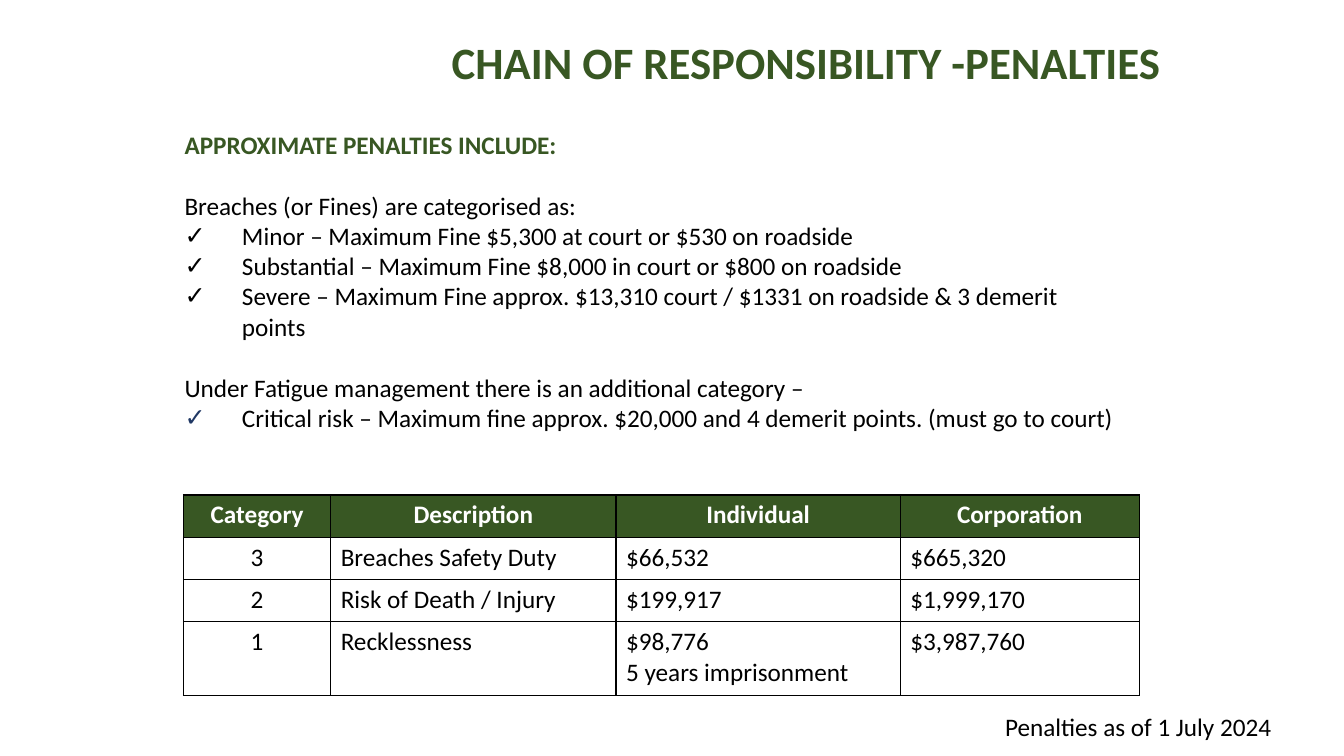
from lxml import etree
from pptx import Presentation
from pptx.dml.color import RGBColor
from pptx.enum.text import MSO_ANCHOR, MSO_AUTO_SIZE, PP_ALIGN
from pptx.oxml.ns import qn
from pptx.util import Inches, Pt

LEFT, CENTER = PP_ALIGN.LEFT, PP_ALIGN.CENTER
TOP, NO_FIT = MSO_ANCHOR.TOP, MSO_AUTO_SIZE.NONE

# Content
COLORS = {"green": "385723", "black": "000000", "white": "FFFFFF", "navy": "203864"}
FONT = "Calibri"
TITLE = "CHAIN OF RESPONSIBILITY -PENALTIES"
HEAD = "APPROXIMATE PENALTIES INCLUDE:"
GROUPS = [
    ("Breaches (or Fines) are categorised as:", "black", [
        "Minor – Maximum Fine $5,300 at court or $530 on roadside",
        "Substantial – Maximum Fine $8,000 in court or $800 on roadside",
        "Severe – Maximum Fine approx. $13,310 court / $1331 on roadside & 3 demerit points",
    ]),
    ("Under Fatigue management there is an additional category –", "navy", [
        "Critical risk – Maximum fine approx. $20,000 and 4 demerit points. (must go to court)",
    ]),
]
ROWS = [
    ["Category", "Description", "Individual", "Corporation"],
    ["3", "Breaches Safety Duty", "$66,532", "$665,320"],
    ["2", "Risk of Death / Injury", "$199,917", "$1,999,170"],
    ["1", "Recklessness", "$98,776\n5 years imprisonment", "$3,987,760"],
]
WIDTHS = [1.46, 2.83, 2.82, 2.37]
HEIGHTS = [0.42, 0.42, 0.42, 0.73]
NOTE = "Penalties as of 1 July 2024"


def color(name):
    return RGBColor.from_string(COLORS[name])


def write(frame, text, size=18, tint="black", bold=False, align=LEFT,
          before=0, mark=None):
    """Add the lines of text to a frame; mark is the colour of a tick bullet."""
    for line in text.split("\n"):
        para = frame.paragraphs[-1]
        if para.runs:
            para = frame.add_paragraph()
        para.alignment = align
        para.space_before = Pt(before)
        run = para.add_run()
        run.text = line
        run.font.name, run.font.size, run.font.bold = FONT, Pt(size), bold
        run.font.color.rgb = color(tint)
        props = para._p.get_or_add_pPr()
        inset = Inches(0.57) if mark else 0
        props.set("marL", str(inset))
        props.set("indent", str(-inset))
        if mark:
            shade = etree.SubElement(props, qn("a:buClr"))
            etree.SubElement(shade, qn("a:srgbClr"), val=COLORS[mark])
            etree.SubElement(props, qn("a:buChar"), char="✓")
        else:
            etree.SubElement(props, qn("a:buNone"))


def place(shape, left, top, width, height):
    shape.left, shape.top = Inches(left), Inches(top)
    shape.width, shape.height = Inches(width), Inches(height)
    frame = shape.text_frame
    frame.word_wrap, frame.auto_size = True, NO_FIT
    frame.vertical_anchor = TOP
    return frame


def border(cell):
    props = cell._tc.get_or_add_tcPr()
    for side in ("lnL", "lnR", "lnT", "lnB"):
        line = etree.SubElement(props, qn("a:" + side), w=str(Pt(1)))
        fill = etree.SubElement(line, qn("a:solidFill"))
        etree.SubElement(fill, qn("a:srgbClr"), val=COLORS["black"])


deck = Presentation()
deck.slide_width, deck.slide_height = Inches(13.33), Inches(7.5)
slide = deck.slides.add_slide(deck.slide_layouts[1])
title, body = slide.placeholders

# Title and body
write(place(title, 4.38, 0.29, 7.6, 0.64), TITLE, size=32, tint="green", bold=True)
frame = place(body, 1.73, 1.23, 9.5, 3.43)
write(frame, HEAD, tint="green", bold=True)
for intro, mark, items in GROUPS:
    write(frame, intro, before=22)
    for item in items:
        write(frame, item, mark=mark)

# Penalty table
grid = slide.shapes.add_table(
    len(ROWS), len(WIDTHS), Inches(1.82), Inches(4.91),
    Inches(sum(WIDTHS)), Inches(sum(HEIGHTS))).table
for col, width in zip(grid.columns, WIDTHS):
    col.width = Inches(width)
for r, (texts, height) in enumerate(zip(ROWS, HEIGHTS)):
    grid.rows[r].height = Inches(height)
    top = r == 0
    for c, text in enumerate(texts):
        cell = grid.cell(r, c)
        border(cell)
        cell.fill.solid()
        cell.fill.fore_color.rgb = color("green" if top else "white")
        write(cell.text_frame, text, tint="white" if top else "black", bold=top,
              align=CENTER if top or c == 0 else LEFT)

# Date note
note = slide.shapes.add_textbox(0, 0, 0, 0)
write(place(note, 9.87, 7.01, 3.15, 0.4), NOTE)

deck.save("out.pptx")
